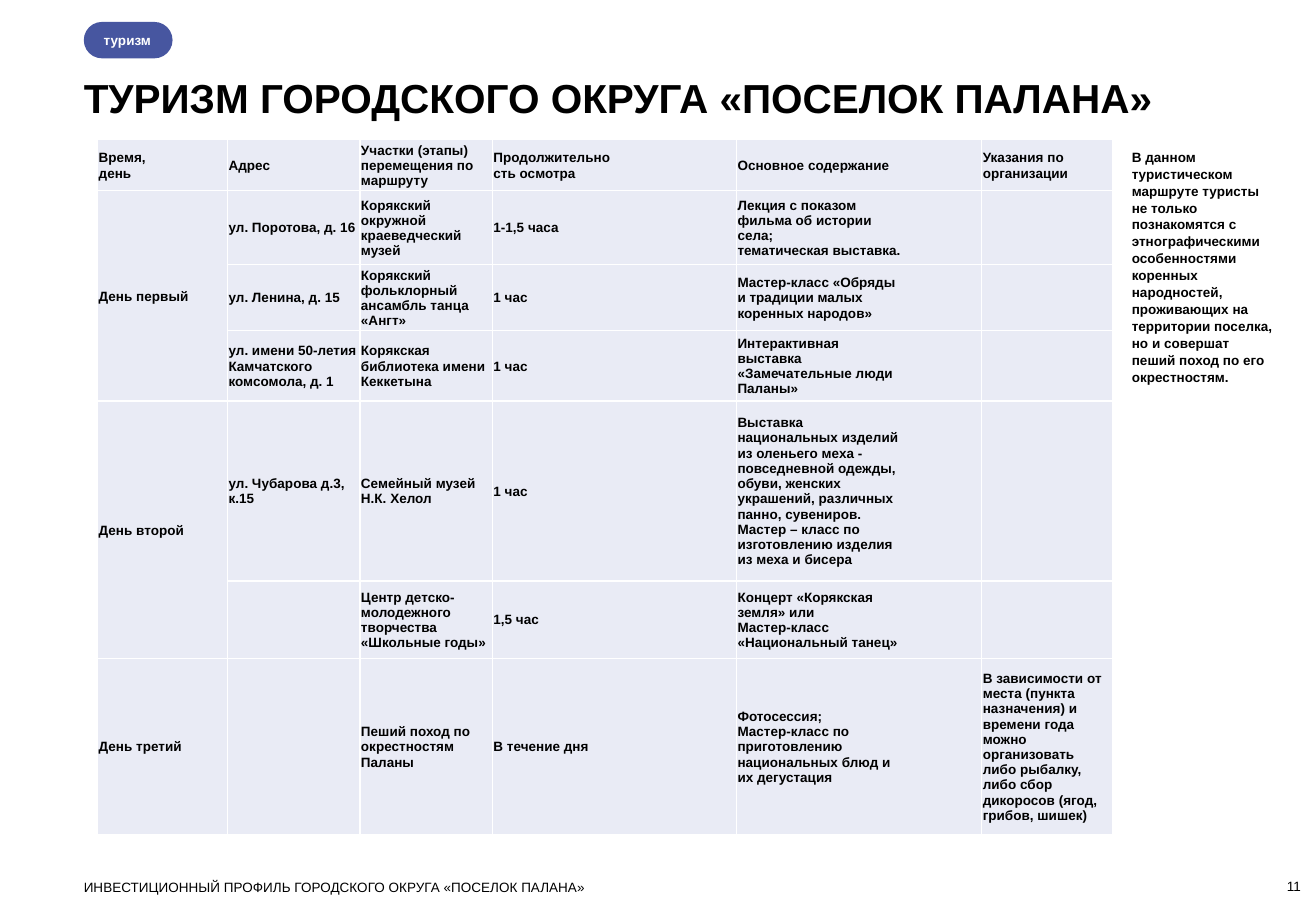
"""Build the tourism route slide of the Palana investment profile."""
from copy import deepcopy

from lxml.etree import SubElement
from pptx import Presentation
from pptx.dml.color import RGBColor
from pptx.enum.shapes import MSO_SHAPE as Shape
from pptx.enum.text import MSO_ANCHOR as Anchor, PP_ALIGN as Align
from pptx.oxml.ns import qn
from pptx.util import Pt

BLACK = RGBColor(0x00, 0x00, 0x00)
WHITE = RGBColor(0xFF, 0xFF, 0xFF)
INDIGO = RGBColor(0x47, 0x56, 0xA0)
PALE_BLUE = RGBColor(0xE9, 0xEB, 0xF5)

SIDE_TEXT = (
    "В данном туристическом маршруте туристы не только познакомятся с "
    "этнографическими особенностями коренных народностей, проживающих на "
    "территории поселка, но и совершат пеший поход по его окрестностям."
)
COLUMN_WIDTHS = [77, 78.5, 78.5, 144.7, 145.4, 77.8]
ROW_HEIGHTS = [30.2, 43.9, 38.2, 41.8, 106.6, 46.1, 104.4]
DAY_SPANS = [(1, 3), (4, 5)]
ROUTE = [
    ["Время,\nдень", "Адрес", "Участки (этапы)\nперемещения по\nмаршруту",
     "Продолжительно\nсть осмотра", "Основное содержание",
     "Указания по\nорганизации"],
    ["День первый", "ул. Поротова, д. 16",
     "Корякский окружной\nкраеведческий музей", "1-1,5 часа",
     "Лекция с показом\nфильма об истории\nсела;\nтематическая выставка.", ""],
    ["", "ул. Ленина, д. 15",
     "Корякский\nфольклорный\nансамбль танца\n«Ангт»", "1 час",
     "Мастер-класс «Обряды\nи традиции малых\nкоренных народов»", ""],
    ["", "ул. имени 50-летия\nКамчатского\nкомсомола, д. 1",
     "Корякская\nбиблиотека имени\nКеккетына", "1 час",
     "Интерактивная\nвыставка\n«Замечательные люди\nПаланы»", ""],
    ["День второй", "ул. Чубарова д.3, к.15", "Семейный музей\nН.К. Хелол",
     "1 час",
     "Выставка\nнациональных изделий\nиз оленьего меха -\n"
     "повседневной одежды,\nобуви, женских\nукрашений, различных\n"
     "панно, сувениров.\nМастер – класс по\nизготовлению изделия\n"
     "из меха и бисера", ""],
    ["", "", "Центр детско-\nмолодежного\nтворчества\n«Школьные годы»",
     "1,5 час",
     "Концерт «Корякская\nземля» или\nМастер-класс\n«Национальный танец»", ""],
    ["День третий", "", "Пеший поход по\nокрестностям\nПаланы",
     "В течение дня",
     "Фотосессия;\nМастер-класс по\nприготовлению\nнациональных блюд и\n"
     "их дегустация",
     "В зависимости от\nместа (пункта\nназначения) и\nвремени года\nможно\n"
     "организовать\nлибо рыбалку,\nлибо сбор\nдикоросов (ягод,\n"
     "грибов, шишек)"],
]


def write_text(frame, text, size=8, bold=False, color=BLACK, align=Align.LEFT,
               spacing=None):
    """Write one formatted paragraph, with line breaks, into a text frame."""
    para = frame.paragraphs[0]
    para.alignment = align
    para.line_spacing = spacing
    for index, line in enumerate(text.split("\n")):
        if index:
            para.add_line_break()
        span = para.add_run()
        span.text = line
        span.font.name = "Arial"
        span.font.size = Pt(size)
        span.font.bold = bold
        span.font.color.rgb = color
    for line_break in para._p.findall(qn("a:br")):
        line_break.append(deepcopy(span._r.rPr))


def set_margins(target, left, top, right, bottom):
    """Set the inner margins of a text frame or a table cell."""
    target.margin_left, target.margin_top = Pt(left), Pt(top)
    target.margin_right, target.margin_bottom = Pt(right), Pt(bottom)


def add_text(page, text, left, top, width, height, margins=(0, 0, 0, 0),
             anchor=Anchor.TOP, **style):
    """Add a wrapping text box."""
    box = page.shapes.add_textbox(Pt(left), Pt(top), Pt(width), Pt(height))
    frame = box.text_frame
    frame.word_wrap = True
    frame.vertical_anchor = anchor
    set_margins(frame, *margins)
    write_text(frame, text, **style)


def add_tag(page, text, left, top, width, height):
    """Add the rounded section tag."""
    tag = page.shapes.add_shape(Shape.ROUNDED_RECTANGLE, Pt(left), Pt(top),
                                Pt(width), Pt(height))
    tag.adjustments[0] = 0.5
    tag.shadow.inherit = False
    tag.fill.solid()
    tag.fill.fore_color.rgb = INDIGO
    tag.line.fill.background()
    frame = tag.text_frame
    frame.vertical_anchor = Anchor.MIDDLE
    set_margins(frame, 8.64, 0, 0, 0)
    write_text(frame, text, bold=True, color=WHITE)


def style_cell(cell):
    """Give a cell its margins, fill and thin white borders."""
    set_margins(cell, 0.7, 0.7, 0.7, 0)
    cell.vertical_anchor = Anchor.MIDDLE
    properties = cell._tc.get_or_add_tcPr()
    for side in ("a:lnL", "a:lnR", "a:lnT", "a:lnB"):
        border = SubElement(properties, qn(side), w=str(Pt(1)))
        fill = SubElement(border, qn("a:solidFill"))
        SubElement(fill, qn("a:srgbClr"), val=str(WHITE))
    cell.fill.solid()
    cell.fill.fore_color.rgb = PALE_BLUE


def add_route_table(page, left, top):
    """Add the table of route stages, with days merged over their rows."""
    table = page.shapes.add_table(
        len(ROW_HEIGHTS), len(COLUMN_WIDTHS), Pt(left), Pt(top),
        Pt(sum(COLUMN_WIDTHS)), Pt(sum(ROW_HEIGHTS))).table
    table.horz_banding = False
    table.first_row = False
    for column, width in zip(table.columns, COLUMN_WIDTHS):
        column.width = Pt(width)
    for row, height, texts in zip(table.rows, ROW_HEIGHTS, ROUTE):
        row.height = Pt(height)
        for cell, text in zip(row.cells, texts):
            style_cell(cell)
            if text:
                write_text(cell.text_frame, text, bold=True)
    for first, last in DAY_SPANS:
        table.cell(first, 0).merge(table.cell(last, 0))


def main():
    """Build and save the deck."""
    deck = Presentation()
    deck.slide_width, deck.slide_height = Pt(780), Pt(540)
    page = deck.slides.add_slide(deck.slide_layouts[6])
    add_text(page, "ТУРИЗМ ГОРОДСКОГО ОКРУГА «ПОСЕЛОК ПАЛАНА»",
             49.7, 43.2, 666.7, 28.8, size=24, bold=True)
    add_tag(page, "туризм", 49.7, 13, 52.6, 21.6)
    add_text(page, "11", 713.5, 520.6, 57.6, 9.4, anchor=Anchor.BOTTOM,
             align=Align.RIGHT)
    add_text(page, SIDE_TEXT, 663.8, 84.2, 98.6, 143.3,
             margins=(7.2, 3.6, 7.2, 3.6), bold=True, spacing=1.05)
    add_text(page, "ИНВЕСТИЦИОННЫЙ ПРОФИЛЬ ГОРОДСКОГО ОКРУГА «ПОСЕЛОК ПАЛАНА»",
             49.7, 521.3, 576, 9.4)
    add_route_table(page, 57.8, 82.8)
    deck.save("out.pptx")


if __name__ == "__main__":
    main()
